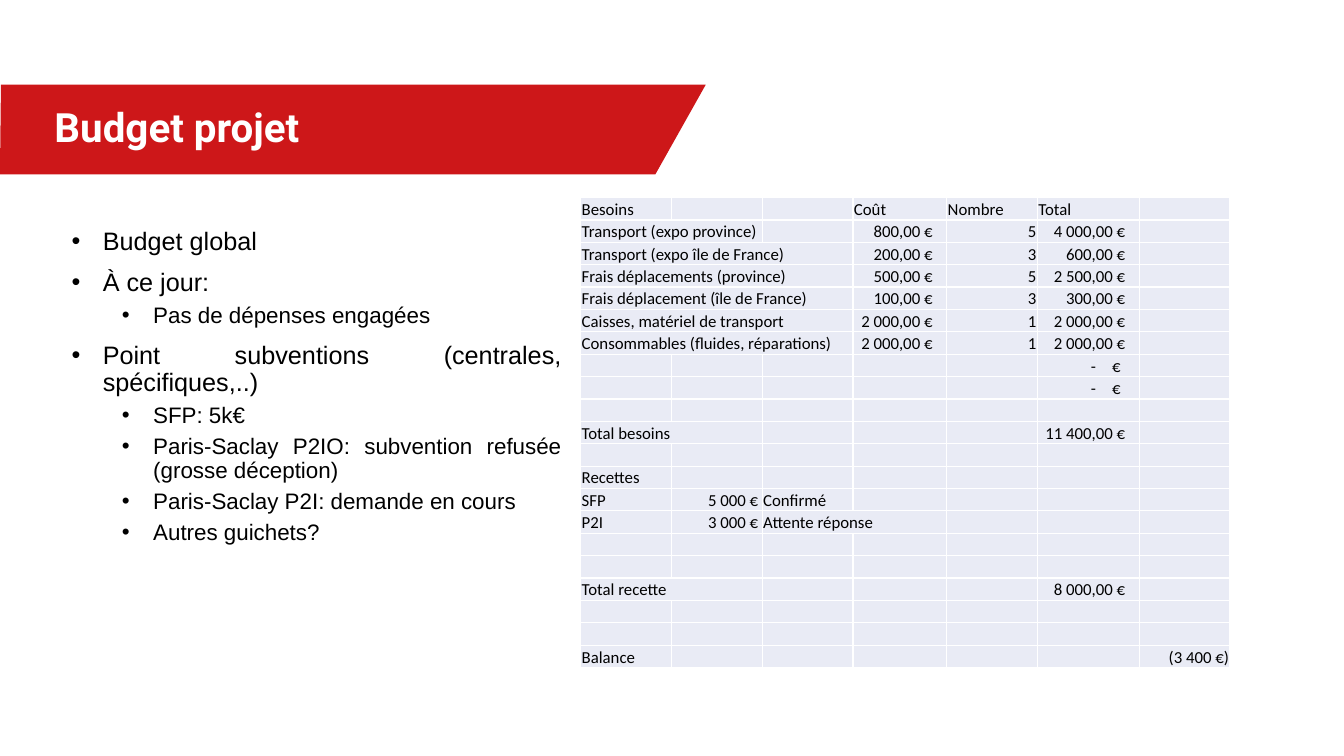
from dataclasses import dataclass

from lxml.etree import SubElement
from pptx import Presentation
from pptx.dml.color import RGBColor
from pptx.enum.text import MSO_ANCHOR as Anchor, MSO_AUTO_SIZE as AutoSize, PP_ALIGN as Align
from pptx.oxml.ns import qn
from pptx.util import Inches, Pt


@dataclass(frozen=True)
class Theme:
    red: str = "CD1719"
    white: str = "FFFFFF"
    black: str = "000000"
    cell: str = "E9EBF5"
    title_font: str = "Roboto"
    body_font: str = "Arial"
    table_font: str = "Calibri"
    title_size: float = 28.8
    level_sizes: tuple = (18, 16)
    table_size: int = 12


BULLETS = [
    (0, "Budget global"),
    (0, "À ce jour:"),
    (1, "Pas de dépenses engagées"),
    (0, "Point subventions (centrales, spécifiques,..)"),
    (1, "SFP: 5k€"),
    (1, "Paris-Saclay P2IO: subvention refusée (grosse déception)"),
    (1, "Paris-Saclay P2I: demande en cours"),
    (1, "Autres guichets?"),
]

NIL = "-\t€"
COLUMN_WIDTHS = [0.9, 0.9, 0.9, 0.93, 0.9, 1.01, 0.9]
ROW_COUNT = 21
BUDGET = {
    0: {0: "Besoins", 3: "Coût", 4: "Nombre", 5: "Total"},
    1: {0: "Transport (expo province)", 3: "800,00 €", 4: "5", 5: "4 000,00 €"},
    2: {0: "Transport (expo île de France)", 3: "200,00 €", 4: "3", 5: "600,00 €"},
    3: {0: "Frais déplacements (province)", 3: "500,00 €", 4: "5", 5: "2 500,00 €"},
    4: {0: "Frais déplacement (île de France)", 3: "100,00 €", 4: "3", 5: "300,00 €"},
    5: {0: "Caisses, matériel de transport", 3: "2 000,00 €", 4: "1", 5: "2 000,00 €"},
    6: {0: "Consommables (fluides, réparations)", 3: "2 000,00 €", 4: "1", 5: "2 000,00 €"},
    7: {5: NIL},
    8: {5: NIL},
    10: {0: "Total besoins", 5: "11 400,00 €"},
    12: {0: "Recettes"},
    13: {0: "SFP", 1: "5 000 €", 2: "Confirmé"},
    14: {0: "P2I", 1: "3 000 €", 2: "Attente réponse"},
    17: {0: "Total recette", 5: "8 000,00 €"},
    20: {0: "Balance", 6: "(3 400 €)"},
}
MERGES = {(1, 0): 2, **{(row, 0): 3 for row in range(2, 7)}, (10, 0): 2, (14, 2): 2, (17, 0): 2}
RIGHT_MARGINS = {1: 0.04, 3: 0.14, 4: 0.01, 5: 0.14, 6: 0.01}


def apply_format(target, values):
    for name, value in values.items():
        setattr(target, name, value)


class SlideBuilder:
    def __init__(self, deck, theme):
        self.theme = theme
        self.page = deck.slides.add_slide(deck.slide_layouts[1])

    def add_span(self, para, text, font, size, color, bold=False):
        span = para.add_run()
        span.text = text
        apply_format(span.font, {"name": font, "size": Pt(size), "bold": bold})
        span.font.color.rgb = RGBColor.from_string(color)

    def place(self, box, left, top, width, height, anchor):
        position = {"left": left, "top": top, "width": width, "height": height}
        apply_format(box, {name: Inches(value) for name, value in position.items()})
        apply_format(box.text_frame, {
            "word_wrap": True, "auto_size": AutoSize.NONE, "vertical_anchor": anchor,
        })

    def band(self, points):
        corners = [(Inches(x), Inches(y)) for x, y in points]
        builder = self.page.shapes.build_freeform(*corners[0])
        builder.add_line_segments(corners[1:], close=True)
        shape = builder.convert_to_shape()
        shape.shadow.inherit = False
        shape.fill.solid()
        shape.fill.fore_color.rgb = RGBColor.from_string(self.theme.red)
        shape.line.fill.background()
        self.page.shapes._spTree.insert(2, shape._element)

    def title(self, text, *frame):
        box = self.page.shapes.title
        self.place(box, *frame, Anchor.MIDDLE)
        para = box.text_frame.paragraphs[0]
        apply_format(para, {"alignment": Align.LEFT, "line_spacing": 0.9})
        theme = self.theme
        self.add_span(para, text, theme.title_font, theme.title_size, theme.white, True)

    def bullets(self, items, *frame):
        box = self.page.placeholders[1]
        self.place(box, *frame, Anchor.TOP)
        for index, (level, text) in enumerate(items):
            para = box.text_frame.add_paragraph() if index else box.text_frame.paragraphs[0]
            apply_format(para, {
                "level": level, "alignment": Align.JUSTIFY, "line_spacing": 0.9,
                "space_before": Pt((10, 5)[level] if index else 0), "space_after": Pt(0),
            })
            props = para._p.get_or_add_pPr()
            props.set("marL", str(Inches(0.31 + 0.5 * level)))
            props.set("indent", str(Inches(-0.31)))
            SubElement(props, qn("a:buFont"), typeface=self.theme.body_font)
            SubElement(props, qn("a:buChar"), char="•")
            self.add_span(para, text, self.theme.body_font,
                          self.theme.level_sizes[level], self.theme.black)

    def table(self, rows, left, top, height):
        size = (ROW_COUNT, len(COLUMN_WIDTHS))
        frame = (left, top, sum(COLUMN_WIDTHS), height)
        grid = self.page.shapes.add_table(*size, *map(Inches, frame)).table
        apply_format(grid, {"first_row": False, "horz_banding": False})
        for column, width in zip(grid.columns, COLUMN_WIDTHS):
            column.width = Inches(width)
        for row in grid.rows:
            row.height = Inches(height / ROW_COUNT)
        for row in range(ROW_COUNT):
            for column in range(len(COLUMN_WIDTHS)):
                self.cell(grid.cell(row, column), row, column, rows.get(row, {}).get(column))
        for (row, column), count in MERGES.items():
            grid.cell(row, column).merge(grid.cell(row, column + count - 1))

    def cell(self, cell, row, column, text):
        right_aligned = row > 0 and column in RIGHT_MARGINS and text != NIL
        apply_format(cell, {
            "margin_left": Inches(0.53 if text == NIL else 0.01),
            "margin_right": Inches(RIGHT_MARGINS[column] if right_aligned else 0.01),
            "margin_top": Inches(0.01), "margin_bottom": 0,
            "vertical_anchor": Anchor.BOTTOM,
        })
        self.borders(cell)
        cell.fill.solid()
        cell.fill.fore_color.rgb = RGBColor.from_string(self.theme.cell)
        para = cell.text_frame.paragraphs[0]
        para.alignment = Align.RIGHT if right_aligned else Align.LEFT
        if text is None:
            SubElement(para._p, qn("a:endParaRPr"), sz=str(self.theme.table_size * 100))
            return
        if text == NIL:
            tabs = SubElement(para._p.get_or_add_pPr(), qn("a:tabLst"))
            SubElement(tabs, qn("a:tab"), pos=str(Inches(0.21)), algn="l")
        self.add_span(para, text, self.theme.table_font, self.theme.table_size, self.theme.black)

    def borders(self, cell):
        props = cell._tc.get_or_add_tcPr()
        for side in ("lnL", "lnR", "lnT", "lnB"):
            line = SubElement(props, qn(f"a:{side}"), w=str(Pt(1)))
            fill = SubElement(line, qn("a:solidFill"))
            SubElement(fill, qn("a:srgbClr"), val=self.theme.white)


def main():
    deck = Presentation()
    apply_format(deck, {"slide_width": Inches(13.33), "slide_height": Inches(7.5)})
    slide = SlideBuilder(deck, Theme())
    slide.band([(6.5, 1.73), (0, 1.73), (0.01, 0.84), (7, 0.84)])
    slide.title("Budget projet", 0.44, 1, 6.43, 0.56)
    slide.bullets(BULLETS, 0.61, 2.22, 5.06, 3.72)
    slide.table(BUDGET, 5.76, 1.96, 4.67)
    deck.save("out.pptx")


if __name__ == "__main__":
    main()
